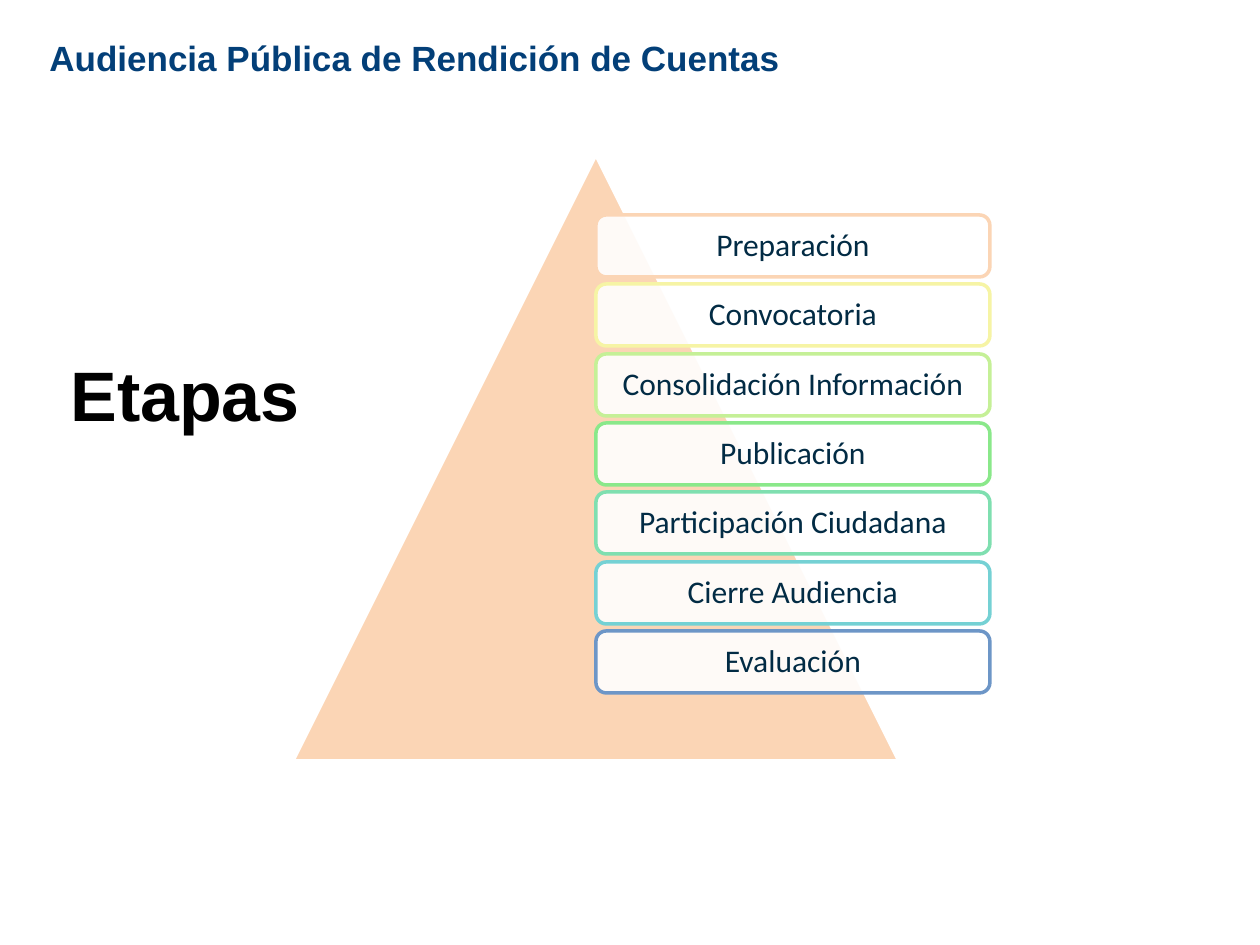
from lxml.etree import SubElement
from pptx import Presentation
from pptx.dml.color import RGBColor
from pptx.enum.shapes import MSO_SHAPE as SHAPE
from pptx.enum.text import MSO_ANCHOR as ANCHOR, PP_ALIGN as ALIGN
from pptx.oxml.ns import qn
from pptx.util import Pt

PX = 914400 // 126  # EMU in one px

TITLE = "Audiencia Pública de Rendición de Cuentas"
HEADING = "Etapas"
STAGES = [
    ("Preparación", "FBD5B5"),
    ("Convocatoria", "F6F4A5"),
    ("Consolidación Información", "C5F097"),
    ("Publicación", "8AE88A"),
    ("Participación Ciudadana", "7FDFB0"),
    ("Cierre Audiencia", "75D1D4"),
    ("Evaluación", "6D96C7"),
]
TITLE_FONT = {"name": "Arial", "size": Pt(20), "bold": True}
HEADING_FONT = {"name": "Arial", "size": Pt(40), "bold": True}
STAGE_FONT = {"name": "Calibri", "size": Pt(18)}

TRIANGLE = (293, 155, 606, 606)
STACK_LEFT, STACK_TOP, STACK_BOTTOM = 596, 215, 693
STAGE_W, STAGE_H = 394, 62


def emu(*lengths):
    return [n * PX for n in lengths]


def rgb(color):
    return RGBColor.from_string(color)


def write(sp, text, font, color):
    p = sp.text_frame.paragraphs[0]
    r = p.add_run()
    r.text = text
    for name, value in font.items():
        setattr(r.font, name, value)
    r.font.color.rgb = rgb(color)
    return p


def add_shape(slide, kind, box, fill, line):
    sp = slide.shapes.add_shape(kind, *emu(*box))
    sp.shadow.inherit = False
    sp.fill.solid()
    sp.fill.fore_color.rgb = rgb(fill)
    sp.line.color.rgb = rgb(line)
    sp.line.width = Pt(2)
    return sp


def add_label(slide, box, text, font, color, wrap):
    sp = slide.shapes.add_textbox(*emu(*box))
    sp.text_frame.word_wrap = wrap
    write(sp, text, font, color)


def add_stage(slide, top, text, color):
    box = (STACK_LEFT, top, STAGE_W, STAGE_H)
    sp = add_shape(slide, SHAPE.ROUNDED_RECTANGLE, box, "FFFFFF", color)
    fill = sp.fill._xPr.find(qn("a:solidFill"))
    SubElement(fill[0], qn("a:alpha"), val="90000")
    tf = sp.text_frame
    tf.word_wrap = True
    tf.vertical_anchor = ANCHOR.MIDDLE
    for side in ("left", "top", "right", "bottom"):
        setattr(tf, f"margin_{side}", 9 * PX)
    p = write(sp, text, STAGE_FONT, "022B44")
    p.alignment = ALIGN.CENTER
    p.line_spacing = 0.9


def main():
    prs = Presentation()
    prs.slide_width, prs.slide_height = emu(1260, 945)
    slide = prs.slides.add_slide(prs.slide_layouts[6])

    add_label(slide, (37, 30, 920, 97), TITLE, TITLE_FONT, "033F78", True)
    add_shape(slide, SHAPE.ISOSCELES_TRIANGLE, TRIANGLE, "FBD5B5", "FFFFFF")
    pitch = (STACK_BOTTOM - STACK_TOP - STAGE_H) / (len(STAGES) - 1)
    for i, (text, color) in enumerate(STAGES):
        add_stage(slide, round(STACK_TOP + i * pitch), text, color)
    add_label(slide, (58, 345, 257, 97), HEADING, HEADING_FONT, "000000", False)

    prs.save("out.pptx")


if __name__ == "__main__":
    main()
